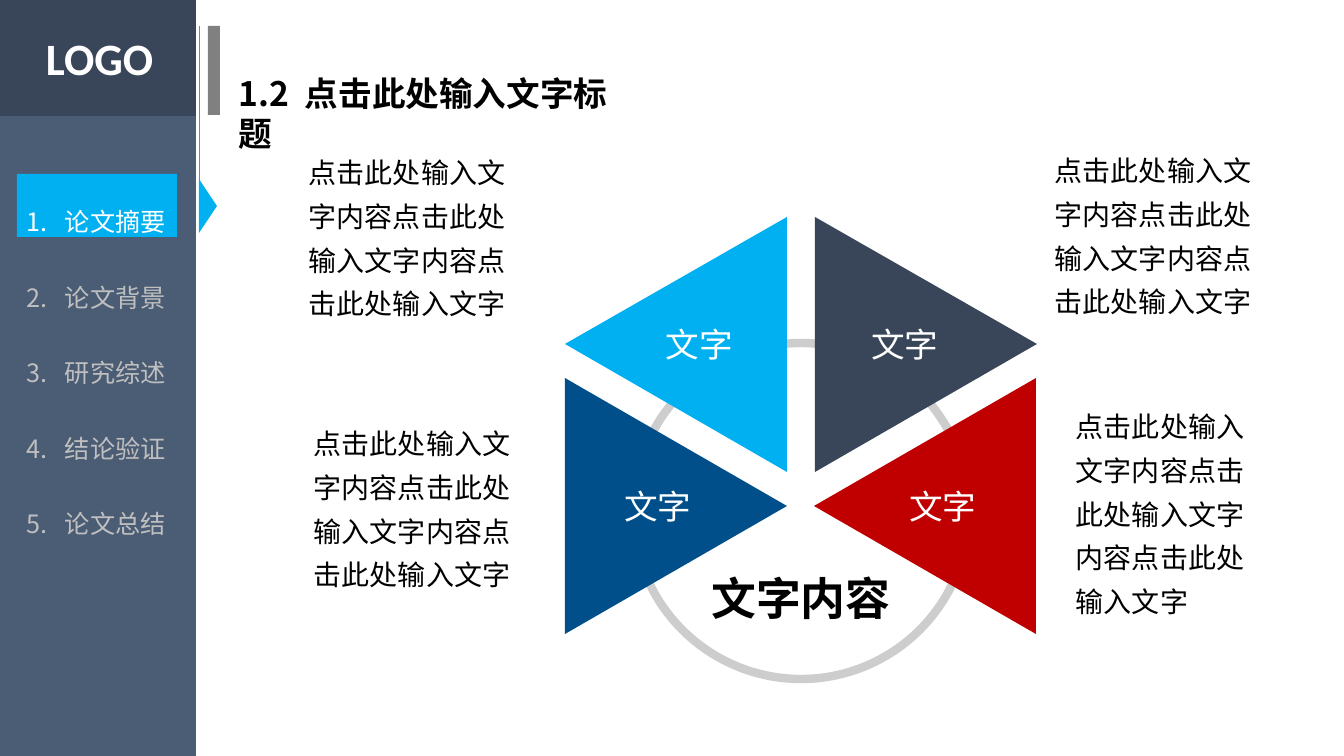
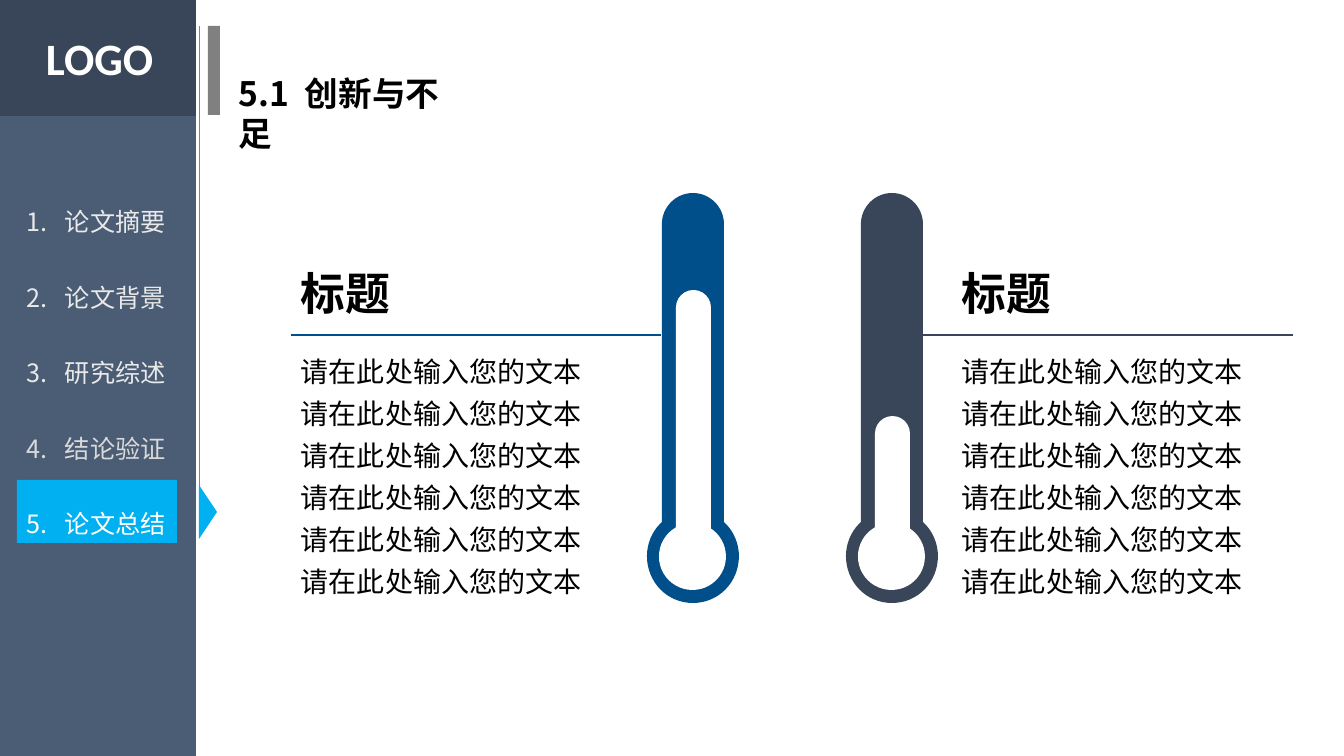
"""Build two thesis slides: a four-triangle diagram and a pair of thermometers."""
import lxml.etree
import pptx
import pptx.dml.color
import pptx.enum.shapes
import pptx.enum.text
import pptx.oxml.ns
import pptx.util

PX = 914400 / 100.8
SHAPE = pptx.enum.shapes.MSO_SHAPE
ANCHOR = pptx.enum.text.MSO_ANCHOR
CENTER = pptx.enum.text.PP_ALIGN.CENTER
Pt = pptx.util.Pt
qn = pptx.oxml.ns.qn
RGB = pptx.dml.color.RGBColor

WHITE = RGB(0xFF, 0xFF, 0xFF)
BLACK = RGB(0x00, 0x00, 0x00)
SLATE = RGB(0x39, 0x46, 0x59)
RAIL = RGB(0x4B, 0x5C, 0x75)
SKY = RGB(0x00, 0xB0, 0xF0)
NAVY = RGB(0x00, 0x4F, 0x8A)
RED = RGB(0xC0, 0x00, 0x00)
GRAY = RGB(0x80, 0x80, 0x80)
RING = RGB(0xCD, 0xCD, 0xCD)
SILVER = RGB(0xBF, 0xBF, 0xBF)
PALE = RGB(0xE9, 0xE9, 0xE9)
LIGHT = RGB(0xD9, 0xD9, 0xD9)
CJK_FONT = "Noto Sans CJK SC"


def place(shapes, kind, geometry, color=None, weight=1):
    """Add a text box, line, outline or preset shape, measured in px."""
    if kind == "outline":
        corners = [(x * PX, y * PX) for x, y in geometry]
        builder = shapes.build_freeform(*corners[0])
        builder.add_line_segments(corners[1:], close=True)
        shape = builder.convert_to_shape()
    else:
        lengths = [round(length * PX) for length in geometry]
        if kind == "text":
            return shapes.add_textbox(*lengths)
        if kind == "line":
            line = shapes.add_connector(pptx.enum.shapes.MSO_CONNECTOR.STRAIGHT, *lengths)
            line.line.color.rgb = color
            line.line.width = Pt(weight)
            lxml.etree.SubElement(line._element.spPr, qn("a:effectLst"))
            return line
        shape = shapes.add_shape(kind, *lengths)
    shape.shadow.inherit = False
    shape.line.fill.background()
    if color is None:
        shape.fill.background()
    else:
        shape.fill.solid()
        shape.fill.fore_color.rgb = color
    return shape


def write(shape, lines, frame_format=None, paragraph_format=None, color=BLACK, **font_format):
    """Fill a shape with paragraphs and return them."""
    frame = shape.text_frame
    for name, value in ({"word_wrap": True} | (frame_format or {})).items():
        setattr(frame, name, value)
    paragraphs = []
    for index, text in enumerate(lines):
        paragraph = frame.add_paragraph() if index else frame.paragraphs[0]
        for name, value in (paragraph_format or {}).items():
            setattr(paragraph, name, value)
        run = paragraph.add_run()
        run.text = text
        run.font.color.rgb = color
        for name, value in ({"name": CJK_FONT} | font_format).items():
            setattr(run.font, name, value)
        east_asian = lxml.etree.SubElement(run._r.get_or_add_rPr(), qn("a:ea"))
        east_asian.set("typeface", run.font.name)
        paragraphs.append(paragraph)
    return paragraphs


deck = pptx.Presentation()
deck.slide_width = round(1344 * PX)
deck.slide_height = round(756 * PX)

CHAPTERS = ["论文摘要", "论文背景", "研究综述", "结论验证", "论文总结"]
SECTIONS = [
    ("1.2\t点击此处输入文字标题", 418, 174, [WHITE] + [SILVER] * 4),
    ("5.1\t创新与不足", 250, 480, [PALE] * 3 + [LIGHT, WHITE]),
]
canvases = []
for heading, heading_width, active_top, chapter_colors in SECTIONS:
    shapes = deck.slides.add_slide(deck.slide_layouts[6]).shapes
    canvases.append(shapes)
    place(shapes, SHAPE.RECTANGLE, (0, 116, 196, 640), RAIL)
    place(shapes, SHAPE.RECTANGLE, (0, 0, 196, 116), SLATE)
    place(shapes, SHAPE.RECTANGLE, (17, active_top, 160, 63), SKY)
    pointer = place(shapes, SHAPE.ISOSCELES_TRIANGLE, (181, active_top + 23, 54, 18), SKY)
    pointer.rotation = 90
    badge = place(shapes, "text", (36, 26, 129, 65))
    write(badge, ["LOGO"], {"word_wrap": False}, color=WHITE, name="Calibri", size=Pt(32), bold=True)
    menu = place(shapes, "text", (17, 156, 160, 392))
    entries = write(menu, CHAPTERS, {"word_wrap": False}, {"line_spacing": 2.5}, size=Pt(18))
    for entry, chapter_color in zip(entries, chapter_colors):
        entry.runs[0].font.color.rgb = chapter_color
        properties = entry._p.get_or_add_pPr()
        properties.set("marL", str(round(38 * PX)))
        properties.set("indent", str(round(-38 * PX)))
        lxml.etree.SubElement(properties, qn("a:buAutoNum")).set("type", "arabicPeriod")
    place(shapes, "line", (199, active_top + 32, 199, 26), SKY, 0.5)
    place(shapes, SHAPE.RECTANGLE, (208, 26, 12, 89), GRAY)
    title = place(shapes, "text", (229, 68, heading_width, 50))
    title_line = write(title, [heading], size=Pt(24), bold=True)[0]
    tabs = lxml.etree.SubElement(title_line._p.get_or_add_pPr(), qn("a:tabLst"))
    tab = lxml.etree.SubElement(tabs, qn("a:tab"))
    tab.set("pos", str(round(66 * PX)))
    tab.set("algn", "l")

diagram, comparison = canvases

ring = place(diagram, SHAPE.OVAL, (633, 343, 336, 336))
ring.line.color.rgb = RING
ring.line.width = Pt(6)
write(ring, ["文字内容"], {"vertical_anchor": ANCHOR.BOTTOM}, {"alignment": CENTER}, size=Pt(32), bold=True)

DESCRIPTION = "点击此处输入文字内容点击此处输入文字内容点击此处输入文字"
for box in [(1066, 435, 200, 148), (1045, 157, 242, 148), (299, 156, 239, 154), (304, 430, 229, 148)]:
    description = place(diagram, "text", box)
    write(description, [DESCRIPTION], {"vertical_anchor": ANCHOR.MIDDLE}, {"line_spacing": 1.3}, size=Pt(20))

TRIANGLES = [
    ([(787, 217), (787, 472), (565, 344)], SKY, 57, 10),
    ([(1036, 378), (1036, 634), (814, 506)], RED, 36, 0),
    ([(565, 378), (787, 506), (565, 634)], NAVY, 0, 36),
    ([(815, 217), (1037, 344), (815, 472)], SLATE, 10, 52),
]
for corners, color, left, right in TRIANGLES:
    triangle = place(diagram, "outline", corners, color)
    label_frame = {
        "vertical_anchor": ANCHOR.MIDDLE,
        "margin_left": round(left * PX),
        "margin_right": round(right * PX),
    }
    write(triangle, ["文字"], label_frame, {"alignment": CENTER}, color=WHITE, size=Pt(24))

GLASS_TOP = (0, 193)
GLASS_EDGES = [
    [(17, 193), (31, 207), (31, 224)],
    [(31, 522)],
    [(33, 524)],
    [(41, 532), (46, 544), (46, 556)],
    [(46, 582), (26, 603), (0, 603)],
    [(-26, 603), (-46, 582), (-46, 556)],
    [(-46, 544), (-41, 532), (-33, 524)],
    [(-31, 522)],
    [(-31, 224)],
    [(-31, 207), (-17, 193), GLASS_TOP],
]
for axis, level_top, color, rule_left, text_left in [
    (892, 416, SLATE, 923, 952),
    (693, 290, NAVY, 291, 291),
]:
    ends = [GLASS_TOP] + [edge[-1] for edge in GLASS_EDGES]
    glass = place(comparison, "outline", [(axis + x, y) for x, y in ends], color)
    for segment, edge in zip(list(glass._element.iter(qn("a:lnTo"))), GLASS_EDGES):
        if len(edge) == 3:
            segment.tag = qn("a:cubicBezTo")
            for position, (x, y) in enumerate(edge[:2]):
                control = lxml.etree.Element(qn("a:pt"))
                control.set("x", str(round((axis + x) * PX - glass.left)))
                control.set("y", str(round(y * PX - glass.top)))
                segment.insert(position, control)
    place(comparison, SHAPE.OVAL, (axis - 34, 523, 67, 67), WHITE)
    column = place(comparison, SHAPE.ROUNDED_RECTANGLE, (axis - 17, level_top, 35, 550 - level_top), WHITE)
    column.adjustments[0] = 0.5
    place(comparison, "line", (rule_left, 335, rule_left + 370, 335), color)
    caption = place(comparison, "text", (text_left, 261, 370, 65))
    write(caption, ["标题"], size=Pt(32), bold=True)
    points = place(comparison, "text", (text_left, 341, 370, 265))
    write(points, ["请在此处输入您的文本"] * 6, None, {"line_spacing": Pt(30)}, size=Pt(20))

deck.save("out.pptx")
